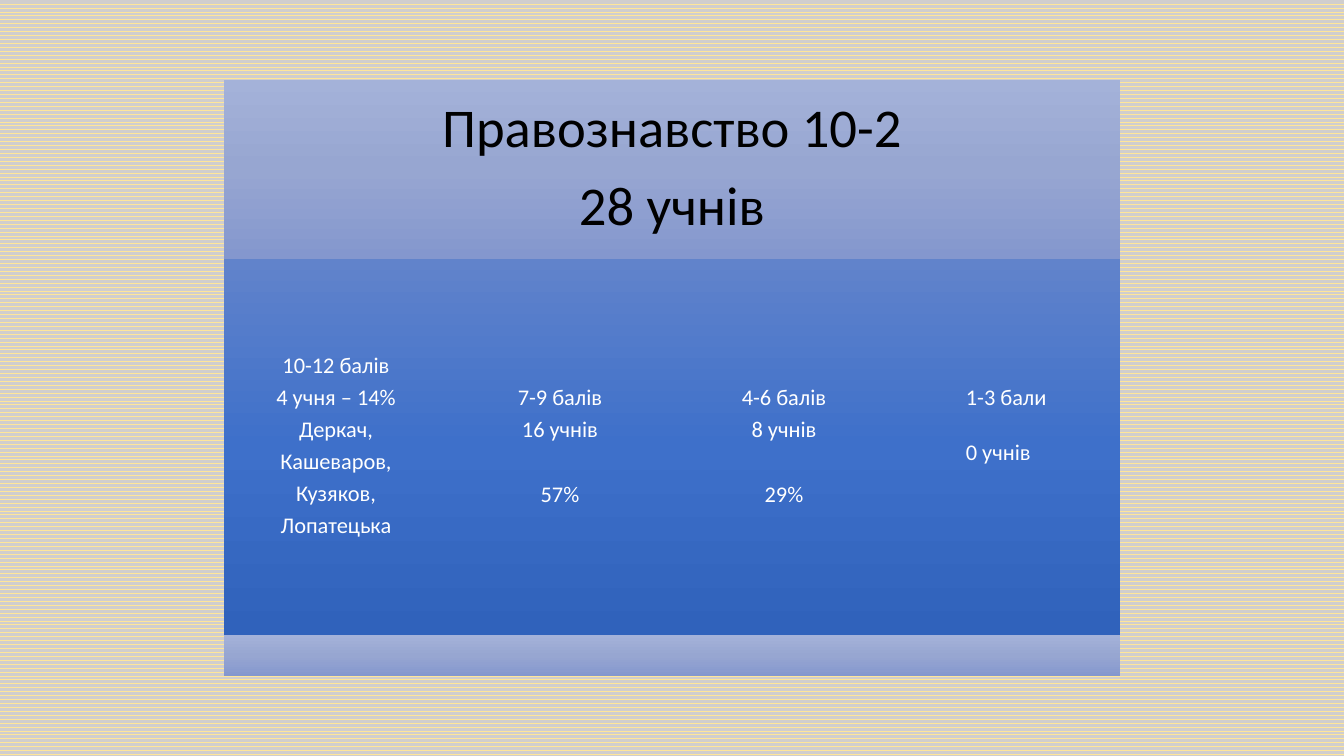
from copy import deepcopy

from pptx import Presentation
from pptx.dml.color import RGBColor
from pptx.enum.dml import MSO_PATTERN
from pptx.enum.shapes import MSO_SHAPE
from pptx.enum.text import MSO_ANCHOR, MSO_AUTO_SIZE, PP_ALIGN
from pptx.oxml.ns import qn
from pptx.util import Inches, Pt

SLIDE_W, SLIDE_H = 13.33, 7.5
BAND_SHADES = ["A4B2D9", "97A6D1", "8497CE"]
COLUMN_SHADES = ["6183CB", "3E70CA", "3062BB"]
HEADER_SHARE, COLUMN_SHARE, FOOTER_SHARE = 0.3, 0.63, 0.07
HEADING = ["Правознавство 10-2", "28 учнів"]
GRADES = [
    ["10-12 балів", "4 учня – 14%", "Деркач,", "Кашеваров,", "Кузяков,", "Лопатецька"],
    ["7-9 балів", "16 учнів", "57%"],
    ["4-6 балів", "8 учнів", "29%"],
    [],
]
LOWEST_GRADE = ["1-3 бали", "0 учнів"]


def color(hex_code):
    return RGBColor.from_string(hex_code)


def add_panel(slide, box, shades):
    """Add a borderless rectangle shaded from top to bottom."""
    panel = slide.shapes.add_shape(MSO_SHAPE.RECTANGLE, *map(Inches, box))
    panel.shadow.inherit = False
    panel.line.fill.background()
    panel.fill.gradient()
    panel.fill.gradient_angle = 270
    stop_list = panel.element.spPr.find(".//" + qn("a:gsLst"))
    stop_list.insert(1, deepcopy(stop_list[0]))
    for i, (stop, shade) in enumerate(zip(panel.fill.gradient_stops, shades)):
        stop.position = i / (len(shades) - 1)
        stop.color.rgb = color(shade)
    return panel


def write_lines(frame, lines, size, ink):
    frame.text = "\n".join(lines)
    for paragraph in frame.paragraphs:
        font = paragraph.runs[0].font
        font.name, font.size, font.color.rgb = "Calibri", Pt(size), color(ink)


def fill_panel(panel, lines, size, ink, inset):
    """Centre the lines in the panel."""
    frame = panel.text_frame
    frame.word_wrap = True
    frame.vertical_anchor = MSO_ANCHOR.MIDDLE
    frame.margin_left = frame.margin_right = Inches(inset)
    frame.margin_top = frame.margin_bottom = Inches(inset)
    write_lines(frame, lines, size, ink)
    for paragraph in frame.paragraphs:
        paragraph.alignment = PP_ALIGN.CENTER
        paragraph.line_spacing = 0.9
        paragraph.space_after = Pt(0.35 * size)


def add_header(slide, box):
    fill_panel(add_panel(slide, box, BAND_SHADES), HEADING, 39, "000000", 0.16)


def add_grade_columns(slide, box):
    left, top, width, height = box
    column_w = width / len(GRADES)
    for i, lines in enumerate(GRADES):
        column = add_panel(slide, (left + i * column_w, top, column_w, height), COLUMN_SHADES)
        if lines:
            fill_panel(column, lines, 16, "FFFFFF", 0.07)
        if lines and lines[-1].endswith("%"):
            column.text_frame.paragraphs[-1].space_before = Pt(23)


def add_lowest_grade(slide, box):
    note = slide.shapes.add_textbox(*map(Inches, box))
    frame = note.text_frame
    frame.word_wrap = False
    frame.auto_size = MSO_AUTO_SIZE.SHAPE_TO_FIT_TEXT
    write_lines(frame, LOWEST_GRADE, 16, "FFFFFF")
    frame.paragraphs[-1].space_before = Pt(19.5)


def build_grades_slide(slide, box):
    """Stack header, grade columns and footer band in the box."""
    left, top, width, height = box
    columns_top = top + HEADER_SHARE * height
    columns_h = COLUMN_SHARE * height
    add_header(slide, (left, top, width, HEADER_SHARE * height))
    add_grade_columns(slide, (left, columns_top, width, columns_h))
    add_panel(slide, (left, columns_top + columns_h, width, FOOTER_SHARE * height), BAND_SHADES)
    add_lowest_grade(slide, (left + 7.26, columns_top + 1.19, 1.01, 0.91))


def main():
    deck = Presentation()
    deck.slide_width, deck.slide_height = Inches(SLIDE_W), Inches(SLIDE_H)
    slide = deck.slides.add_slide(deck.slide_layouts[6])
    backdrop = slide.background.fill
    backdrop.patterned()
    backdrop.pattern = MSO_PATTERN.WAVE
    backdrop.fore_color.rgb = color("FFE699")
    backdrop.back_color.rgb = color("D0CECE")
    build_grades_slide(slide, (SLIDE_W / 6, 0.79, SLIDE_W * 2 / 3, 5.92))
    deck.save("out.pptx")


if __name__ == "__main__":
    main()
